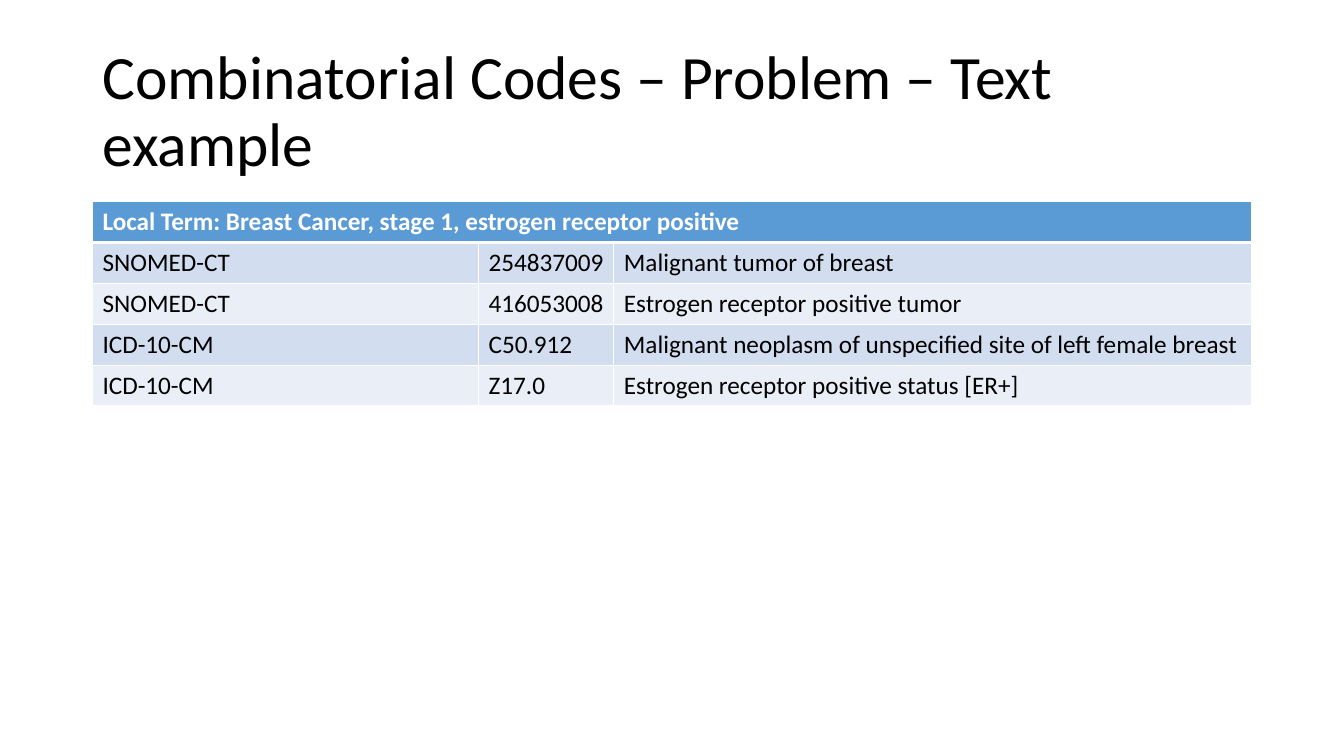
import pptx
import pptx.dml.color
import pptx.enum.text
import pptx.oxml
import pptx.oxml.ns
import pptx.util
from pptx.util import Cm

COLOURS = {
    "text": "000000",
    "white": "FFFFFF",
    "header": "5B9BD5",
    "odd_row": "D2DEEF",
    "even_row": "EAEFF7",
}
FONT = "Calibri"
LEFT, WIDTH = Cm(2.33), Cm(29.21)
ROW_HEIGHT = Cm(1.03)
COLUMN_WIDTHS = [Cm(9.73), Cm(3.41), Cm(16.07)]

LOCAL_TERM = "Local Term: Breast Cancer, stage 1, estrogen receptor positive"
CODES = [
    ("SNOMED-CT", "254837009", "Malignant tumor of breast"),
    ("SNOMED-CT", "416053008", "Estrogen receptor positive tumor"),
    ("ICD-10-CM", "C50.912", "Malignant neoplasm of unspecified site of left female breast"),
    ("ICD-10-CM", "Z17.0", "Estrogen receptor positive status [ER+]"),
]


def rgb(name):
    return pptx.dml.color.RGBColor.from_string(COLOURS[name])


def write_text(frame, text, size=18, colour="text", bold=False, line_spacing=None):
    para = frame.paragraphs[0]
    para.alignment = pptx.enum.text.PP_ALIGN.LEFT
    para.line_spacing = line_spacing
    span = para.add_run()
    span.text = text
    span.font.name = FONT
    span.font.size = pptx.util.Pt(size)
    span.font.bold = bold
    span.font.color.rgb = rgb(colour)


def add_title(page, text):
    box = page.shapes.title
    box.left, box.top, box.width, box.height = LEFT, Cm(1.01), WIDTH, Cm(3.68)
    frame = box.text_frame
    frame.word_wrap = True
    frame.auto_size = pptx.enum.text.MSO_AUTO_SIZE.NONE
    frame.vertical_anchor = pptx.enum.text.MSO_ANCHOR.MIDDLE
    write_text(frame, text, size=44, line_spacing=0.9)


def set_borders(cell, top=1, bottom=1):
    properties = cell._tc.get_or_add_tcPr()
    for side, points in (("L", 1), ("R", 1), ("T", top), ("B", bottom)):
        properties.append(pptx.oxml.parse_xml(
            f'<a:ln{side} {pptx.oxml.ns.nsdecls("a")} w="{pptx.util.Pt(points)}">'
            f'<a:solidFill><a:srgbClr val="{COLOURS["white"]}"/></a:solidFill>'
            f'</a:ln{side}>'))


def style_cell(cell, fill, **borders):
    # Border lines must come before the fill in the cell properties
    set_borders(cell, **borders)
    cell.fill.solid()
    cell.fill.fore_color.rgb = rgb(fill)


def add_code_table(page, heading, codes):
    row_count = len(codes) + 1
    table = page.shapes.add_table(row_count, len(COLUMN_WIDTHS), LEFT, Cm(5.08),
                                  WIDTH, ROW_HEIGHT * row_count).table
    for column, width in zip(table.columns, COLUMN_WIDTHS):
        column.width = width
    for row in table.rows:
        row.height = ROW_HEIGHT

    # Heading across all columns
    for cell in table.rows[0].cells:
        style_cell(cell, "header", bottom=3)
    table.cell(0, 0).merge(table.cell(0, len(COLUMN_WIDTHS) - 1))
    write_text(table.cell(0, 0).text_frame, heading, colour="white", bold=True)

    # Banded code rows
    for number, values in enumerate(codes, start=1):
        fill = "odd_row" if number % 2 else "even_row"
        for cell, value in zip(table.rows[number].cells, values):
            style_cell(cell, fill, top=3 if number == 1 else 1)
            write_text(cell.text_frame, value)


def main():
    deck = pptx.Presentation()
    deck.slide_width, deck.slide_height = Cm(33.87), Cm(19.05)
    page = deck.slides.add_slide(deck.slide_layouts.get_by_name("Title Only"))
    add_title(page, "Combinatorial Codes – Problem – Text example")
    add_code_table(page, LOCAL_TERM, CODES)
    deck.save("out.pptx")


if __name__ == "__main__":
    main()
